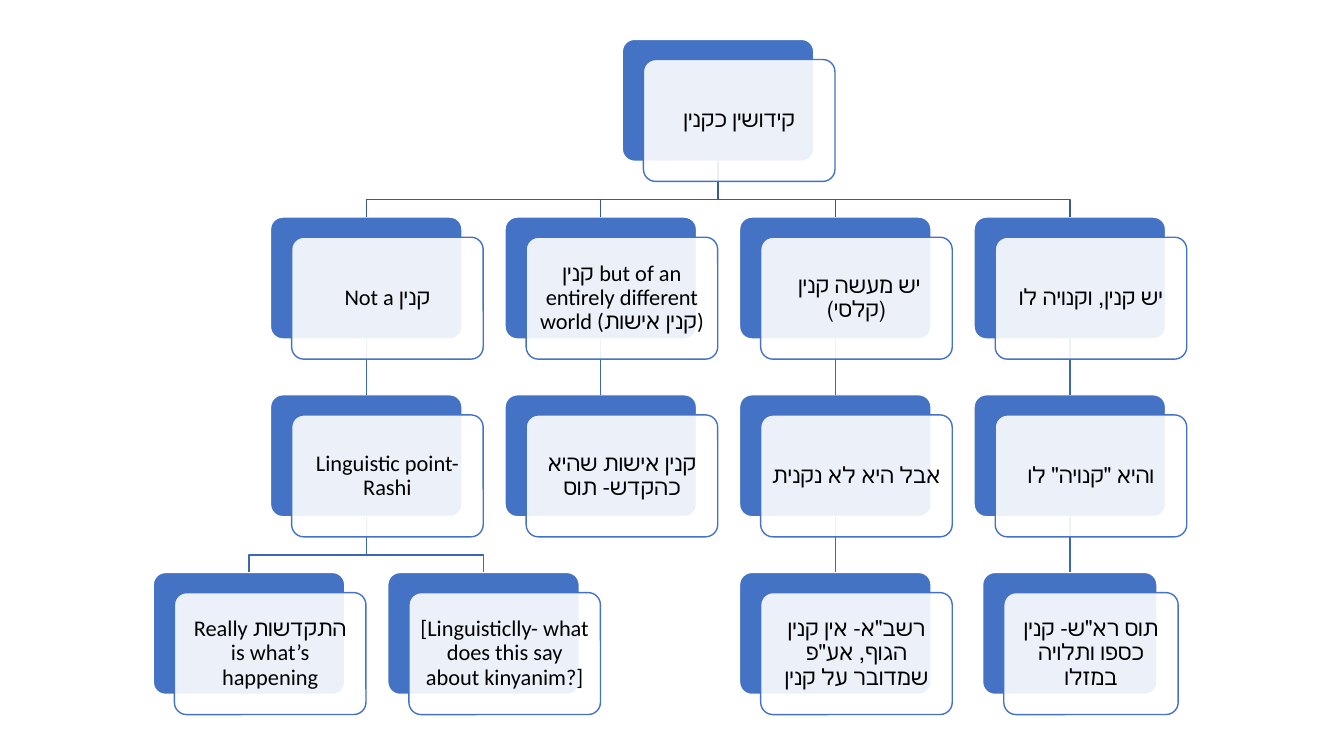
import pptx
import pptx.util
import pptx.dml.color
import pptx.enum.shapes
import pptx.enum.text
import lxml.etree
from dataclasses import dataclass
from pptx.util import Inches

TOPICS = {
    "kiddushin": ("קידושין כקנין", None, 0, 2),
    "not_kinyan": ("Not a קנין", "kiddushin", 1, 0.5),
    "rashi": ("Linguistic point- Rashi", "not_kinyan", 2, 0.5),
    "hitkadshut": ("Really התקדשות is what’s happening", "rashi", 3, 0),
    "kinyanim": ("[Linguisticlly- what does this say about kinyanim?]", "rashi", 3, 1),
    "ishut": ("קנין but of an entirely different world (קנין אישות)", "kiddushin", 1, 1.5),
    "hekdesh": ("קנין אישות שהיא כהקדש- תוס", "ishut", 2, 1.5),
    "maaseh": (" יש מעשה קנין (קלסי)", "kiddushin", 1, 2.5),
    "not_acquired": ("אבל היא לא נקנית", "maaseh", 2, 2.5),
    "rashba": ("רשב\"א- אין קנין הגוף, אע\"פ שמדובר על קנין", "not_acquired", 3, 2.5),
    "acquired": ("יש קנין, וקנויה לו", "kiddushin", 1, 3.5),
    "bought": ("והיא \"קנויה\" לו", "acquired", 2, 3.5),
    "tos_rash": ("תוס רא\"ש- קנין כספו ותלויה במזלו", "bought", 3, 3.5),
}
CARD_WIDTHS = {"tos_rash": 1.73}


@dataclass(frozen=True)
class Theme:
    font: str = "Calibri"
    size: int = 16
    text: str = "000000"
    card: str = "4472C4"
    panel: str = "FFFFFF"
    panel_opacity: int = 90
    top_branch: str = "365B9D"
    lower_branch: str = "3E67B2"
    stroke: float = 1


THEME = Theme()
FIRST_CENTER, COLUMN_PITCH = 2.47, 2.326
FIRST_TOP, ROW_PITCH = 0.39, 1.763
CARD_WIDTH, CARD_HEIGHT = 1.9, 1.21
PANEL_SHIFT_X, PANEL_SHIFT_Y = 0.21, 0.2
BEND_DROP = 0.38


def rgb(code):
    return pptx.dml.color.RGBColor.from_string(code)


def card_place(topic):
    _, _, level, slot = TOPICS[topic]
    center = FIRST_CENTER + slot * COLUMN_PITCH
    return center, FIRST_TOP + level * ROW_PITCH, CARD_WIDTHS.get(topic, CARD_WIDTH)


def add_card(slide, topic, fill, outline, shift_x=0, shift_y=0):
    center, top, width = card_place(topic)
    card = slide.shapes.add_shape(
        pptx.enum.shapes.MSO_SHAPE.ROUNDED_RECTANGLE,
        Inches(center - width / 2 + shift_x), Inches(top + shift_y),
        Inches(width), Inches(CARD_HEIGHT))
    card.adjustments[0] = 0.1
    card.shadow.inherit = False
    card.fill.solid()
    card.fill.fore_color.rgb = rgb(fill)
    card.line.color.rgb = rgb(outline)
    card.line.width = pptx.util.Pt(THEME.stroke)
    return card


def set_opacity(card, percent):
    color = card.fill._xPr.find(".//" + pptx.oxml.ns.qn("a:srgbClr"))
    lxml.etree.SubElement(color, pptx.oxml.ns.qn("a:alpha"), val=str(percent * 1000))


def write_text(card, text, *, font, size, color, inset=0.07, spacing=0.9):
    frame = card.text_frame
    frame.word_wrap = True
    frame.vertical_anchor = pptx.enum.text.MSO_ANCHOR.MIDDLE
    frame.margin_left = frame.margin_right = Inches(inset)
    frame.margin_top = frame.margin_bottom = Inches(inset)
    paragraph = frame.paragraphs[0]
    paragraph.alignment = pptx.enum.text.PP_ALIGN.CENTER
    paragraph.line_spacing = spacing
    run = paragraph.add_run()
    run.text = text
    run.font.name = font
    run.font.size = pptx.util.Pt(size)
    run.font.color.rgb = rgb(color)


def add_branch(slide, parent, child, cards):
    parent_center, parent_top, _ = card_place(parent)
    child_center, child_top, _ = card_place(child)
    start = parent_top + CARD_HEIGHT
    if parent_center == child_center:
        branch = slide.shapes.add_connector(
            pptx.enum.shapes.MSO_CONNECTOR.STRAIGHT,
            Inches(parent_center), Inches(start), Inches(child_center), Inches(child_top))
        branch.begin_connect(cards[parent], 2)
        branch.end_connect(cards[child], 0)
        lxml.etree.SubElement(branch._element.spPr, pptx.oxml.ns.qn("a:effectLst"))
    else:
        bend = Inches(start + BEND_DROP)
        outline = slide.shapes.build_freeform(Inches(parent_center), Inches(start))
        outline.add_line_segments([
            (Inches(parent_center), bend), (Inches(child_center), bend),
            (Inches(child_center), Inches(child_top))], close=False)
        branch = outline.convert_to_shape()
        branch.fill.background()
        branch.shadow.inherit = False
    is_top = TOPICS[parent][1] is None
    branch.line.color.rgb = rgb(THEME.top_branch if is_top else THEME.lower_branch)
    branch.line.width = pptx.util.Pt(THEME.stroke)


def main():
    deck = pptx.Presentation()
    deck.slide_width, deck.slide_height = Inches(13.33), Inches(7.5)
    slide = deck.slides.add_slide(deck.slide_layouts[6])

    cards = {topic: add_card(slide, topic, THEME.card, THEME.panel) for topic in TOPICS}
    for topic, (_, parent, _, _) in TOPICS.items():
        if parent:
            add_branch(slide, parent, topic, cards)
    for topic, (text, _, _, _) in TOPICS.items():
        panel = add_card(slide, topic, THEME.panel, THEME.card, PANEL_SHIFT_X, PANEL_SHIFT_Y)
        set_opacity(panel, THEME.panel_opacity)
        write_text(panel, text, font=THEME.font, size=THEME.size, color=THEME.text)

    deck.save("out.pptx")


if __name__ == "__main__":
    main()
